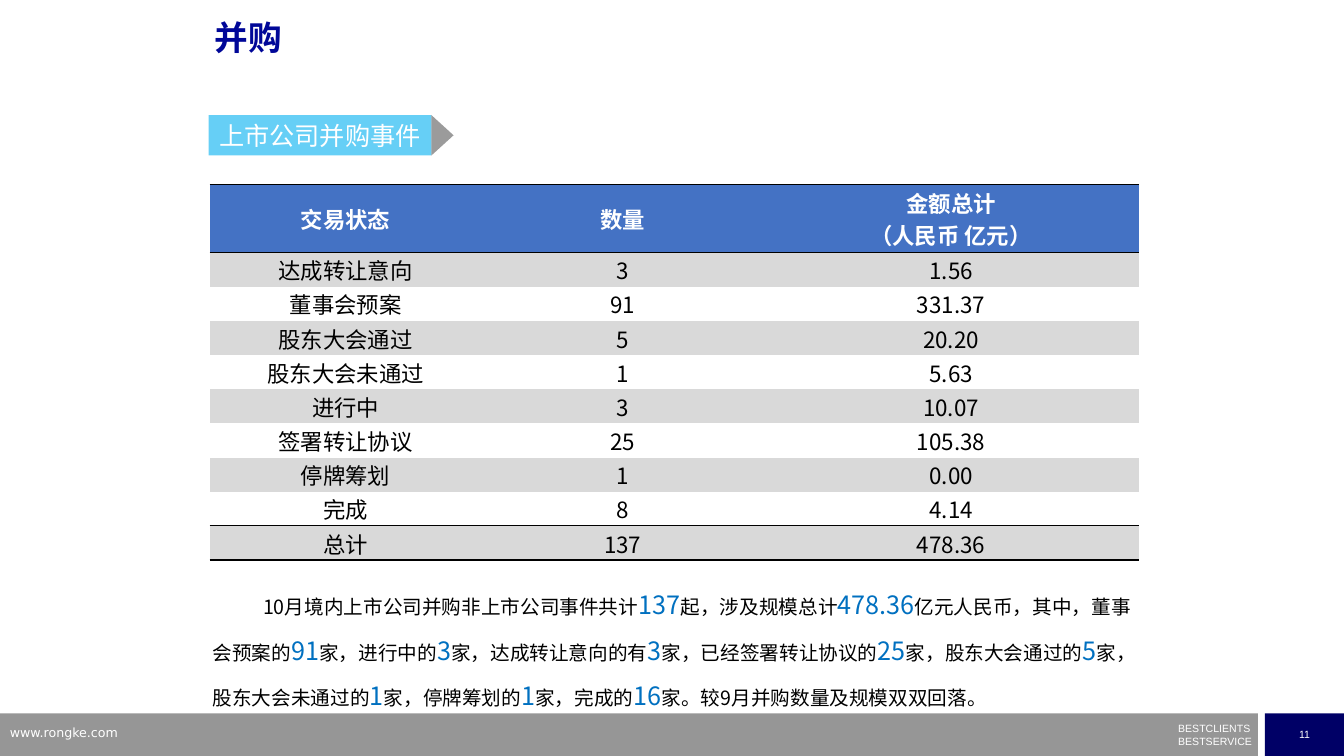
from lxml.etree import SubElement
from pptx import Presentation
from pptx.dml.color import RGBColor
from pptx.enum.shapes import MSO_SHAPE
from pptx.enum.text import MSO_ANCHOR, PP_ALIGN
from pptx.oxml.ns import qn
from pptx.util import Cm, Pt

NOTO = "Noto Sans CJK SC"
WIDE, HIGH = 33.87, 19.05
HEAD = ["交易状态", "数量", "金额总计\n（人民币 亿元）"]
DEALS = [
    ("达成转让意向", "3", "1.56"),
    ("董事会预案", "91", "331.37"),
    ("股东大会通过", "5", "20.20"),
    ("股东大会未通过", "1", "5.63"),
    ("进行中", "3", "10.07"),
    ("签署转让协议", "25", "105.38"),
    ("停牌筹划", "1", "0.00"),
    ("完成", "8", "4.14"),
    ("总计", "137", "478.36"),
]
# Words and figures take turns
NOTE = [
    "10月境内上市公司并购非上市公司事件共计", "137", "起，涉及规模总计", "478.36",
    "亿元人民币，其中，董事会预案的", "91", "家，进行中的", "3",
    "家，达成转让意向的有", "3", "家，已经签署转让协议的", "25",
    "家，股东大会通过的", "5", "家，股东大会未通过的", "1",
    "家，停牌筹划的", "1", "家，完成的", "16", "家。较9月并购数量及规模双双回落。",
]


def paint(fill, tint, alpha=None):
    fill.solid()
    fill.fore_color.rgb = RGBColor.from_string(tint)
    if alpha:
        color = fill._xPr.find(qn("a:solidFill"))[0]
        SubElement(color, qn("a:alpha"), val=str(alpha * 1000))


def write(para, text, size, tint, face=NOTO, bold=False):
    run = para.add_run()
    run.text = text
    font = run.font
    font.size, font.name, font.bold = Pt(size), face, bold
    paint(font.fill, tint)
    SubElement(run._r.get_or_add_rPr(), qn("a:ea"), typeface=NOTO)


def block(slide, kind, box, tint, alpha=None):
    shape = slide.shapes.add_shape(kind, *map(Cm, box))
    shape.shadow.inherit = False
    shape.line.fill.background()
    paint(shape.fill, tint, alpha)
    frame = shape.text_frame
    frame.word_wrap = False
    frame.vertical_anchor = MSO_ANCHOR.MIDDLE
    frame.paragraphs[0].alignment = PP_ALIGN.CENTER
    return shape


def label(slide, box, inset=True):
    frame = slide.shapes.add_textbox(*map(Cm, box)).text_frame
    frame.word_wrap = True
    if not inset:
        frame.margin_left = frame.margin_right = 0
        frame.margin_top = frame.margin_bottom = 0
    return frame


def footer(slide, x, y, w, h):
    page, gap = 1.99, 0.18
    bar = w - page - gap
    block(slide, MSO_SHAPE.RECTANGLE, (x, y, bar, h), "969696")
    number = block(slide, MSO_SHAPE.RECTANGLE, (x + w - page, y, page, h), "000066")
    write(number.text_frame.paragraphs[0], "11", 7.5, "FFFFFF", "Arial")

    motto = label(slide, (x + bar - 2.01, y + 0.36, 1.93, 0.5), inset=False)
    first, second = motto.paragraphs[0], motto.add_paragraph()
    second.space_before = Pt(4.3)
    for para, text in ((first, "BESTCLIENTS"), (second, "BESTSERVICE")):
        para.line_spacing = 0.5
        write(para, text, 7.5, "FFFFFF", "Arial")

    site = label(slide, (x, y + 0.16, 8.13, 0.66))
    write(site.paragraphs[0], "www.rongke.com", 9, "FFFFFF", "DejaVu Sans")


def title(slide, x, y, w, h):
    shape = slide.shapes.title
    shape.left, shape.top, shape.width, shape.height = map(Cm, (x, y, w, h))
    frame = shape.text_frame
    frame.vertical_anchor = MSO_ANCHOR.TOP
    para = frame.paragraphs[0]
    para.alignment = PP_ALIGN.LEFT
    para.line_spacing = 0.9
    write(para, "并购", 24, "000798", "Arial", True)


def banner(slide, x, y, w, h):
    tag = block(slide, MSO_SHAPE.RECTANGLE, (x, y, w, h), "00B0F0", 60)
    write(tag.text_frame.paragraphs[0], "上市公司并购事件", 18, "FFFFFF")
    deep = 0.56
    box = (x + w + (deep - h) / 2, y + (h - deep) / 2, h, deep)
    tip = block(slide, MSO_SHAPE.ISOSCELES_TRIANGLE, box, "595959", 60)
    tip.rotation = 90


def border(cell, sides):
    """Rule the named sides in black and clear the others."""
    props = cell._tc.get_or_add_tcPr()
    for side in "LRTB":
        line = SubElement(props, qn("a:ln" + side), w=str(Pt(1)))
        if side in sides:
            fill = SubElement(line, qn("a:solidFill"))
            SubElement(fill, qn("a:srgbClr"), val="000000")
        else:
            SubElement(line, qn("a:noFill"))


def deals(slide, x, y, w, h):
    rows = [HEAD, *DEALS]
    last = len(rows) - 1
    table = slide.shapes.add_table(len(rows), 3, *map(Cm, (x, y, w, h))).table
    table.first_row = table.horz_banding = False
    for col, part in zip(table.columns, (0.293, 0.303, 0.404)):
        col.width = Cm(w * part)
    rules = {0: "TB", 1: "T", last - 1: "B", last: "TB"}
    unit = h / (len(rows) + 1)
    for i, row in enumerate(rows):
        table.rows[i].height = Cm(unit if i else 2 * unit)
        for j, text in enumerate(row):
            cell = table.cell(i, j)
            border(cell, rules.get(i, ""))
            if i == 0:
                paint(cell.fill, "4472C4")
            elif i % 2:
                paint(cell.fill, "D9D9D9")
            else:
                cell.fill.background()
            cell.vertical_anchor = MSO_ANCHOR.MIDDLE
            cell.margin_left = cell.margin_right = cell.margin_top = Cm(0.02)
            cell.margin_bottom = 0
            para = cell.text_frame.paragraphs[0]
            para.alignment = PP_ALIGN.CENTER
            for k, line in enumerate(text.split("\n")):
                if k:
                    para.add_line_break()
                write(para, line, 16, "000000" if i else "FFFFFF", bold=i == 0)


def note(slide, x, y, w, h):
    para = label(slide, (x, y, w, h), inset=False).paragraphs[0]
    para.line_spacing = 1.5
    props = para._p.get_or_add_pPr()
    props.set("marL", "0")
    props.set("indent", str(Cm(1.27)))
    for i, text in enumerate(NOTE):
        size, tint = (18, "0070C0") if i % 2 else (14, "000000")
        write(para, text, size, tint)


def main():
    deck = Presentation()
    deck.slide_width, deck.slide_height = Cm(WIDE), Cm(HIGH)
    slide = deck.slides.add_slide(deck.slide_layouts[5])
    footer(slide, 0, 17.98, WIDE, HIGH - 17.98)
    title(slide, 5.16, 0.41, 22.86, 1.78)
    banner(slide, 5.26, 2.9, 5.61, 1.02)
    deals(slide, 5.28, 4.64, 23.42, 9.48)
    note(slide, 5.36, 14.48, 23.34, 3.33)
    deck.save("out.pptx")


if __name__ == "__main__":
    main()
